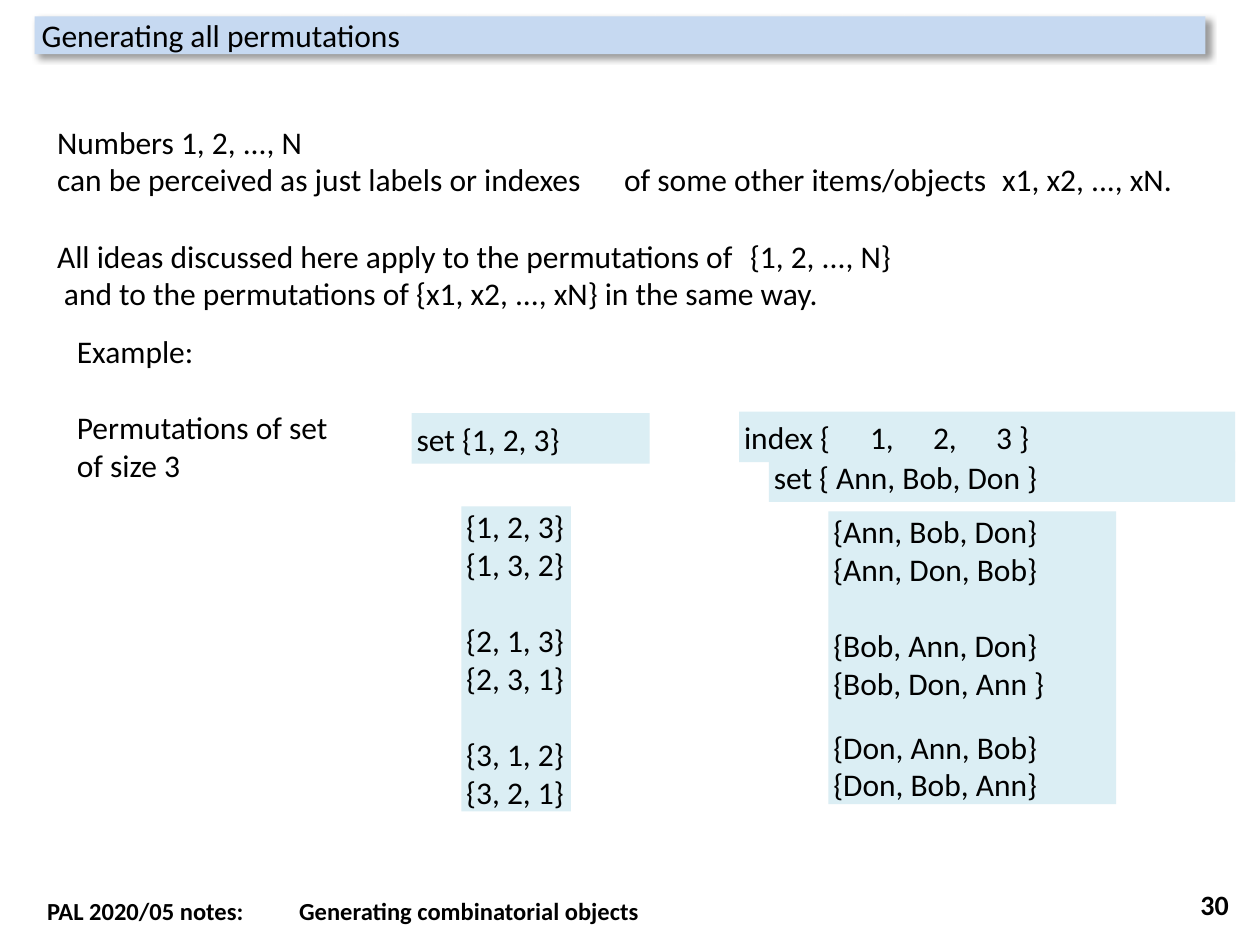
from dataclasses import dataclass

from lxml.etree import SubElement
from pptx import Presentation
from pptx.dml.color import RGBColor
from pptx.enum.shapes import MSO_SHAPE
from pptx.enum.text import MSO_ANCHOR, MSO_AUTO_SIZE, PP_ALIGN
from pptx.oxml.ns import qn
from pptx.util import Cm, Pt

BLACK = RGBColor(0x00, 0x00, 0x00)
TITLE_BLUE = RGBColor(0xC6, 0xD9, 0xF1)
PANEL_BLUE = RGBColor(0xDB, 0xEE, 0xF4)

FONT = "Calibri"
LINE_GAP = 22        # one 18 pt line
SMALL_GAP = 14.65    # one 12 pt line
TEXT_INSETS = (0.25, 0.13)
LABEL_INSETS = (0.1, 0.13)
LIST_INSETS = (0.1, 0)


@dataclass(frozen=True)
class Box:
    left: float
    top: float
    width: float
    height: float


@dataclass(frozen=True)
class Line:
    text: str
    gap: float = 0               # points above the line
    indent: float = 0            # cm
    tabs: tuple[float, ...] = ()  # cm


@dataclass(frozen=True)
class Panel:
    box: Box
    lines: list[Line]
    insets: tuple[float, float] = LABEL_INSETS
    anchor: MSO_ANCHOR = MSO_ANCHOR.TOP


def place(shape, box: Box) -> None:
    shape.left, shape.top = Cm(box.left), Cm(box.top)
    shape.width, shape.height = Cm(box.width), Cm(box.height)


def write(shape, lines: list[Line], *, size: float = 18, bold: bool = False,
          align=PP_ALIGN.LEFT, anchor=MSO_ANCHOR.TOP,
          insets: tuple[float, float] = TEXT_INSETS) -> None:
    frame = shape.text_frame
    frame.word_wrap = True
    frame.auto_size = MSO_AUTO_SIZE.NONE
    frame.vertical_anchor = anchor
    frame.margin_left = frame.margin_right = Cm(insets[0])
    frame.margin_top = frame.margin_bottom = Cm(insets[1])
    for number, line in enumerate(lines):
        paragraph = frame.add_paragraph() if number else frame.paragraphs[0]
        paragraph.alignment = align
        paragraph.space_before = Pt(line.gap)
        run = paragraph.add_run()
        run.text = line.text
        run.font.name, run.font.size, run.font.bold = FONT, Pt(size), bold
        run.font.color.rgb = BLACK
        # Indent, no bullet and tab stops
        properties = paragraph._p.get_or_add_pPr()
        properties.set("marL", str(Cm(line.indent)))
        properties.set("indent", "0")
        SubElement(properties, qn("a:buNone"))
        if line.tabs:
            stops = SubElement(properties, qn("a:tabLst"))
            for stop in line.tabs:
                SubElement(stops, qn("a:tab"), pos=str(Cm(stop)), algn="l")


def add_note(slide, box: Box, lines: list[Line], **text_format) -> None:
    note = slide.shapes.add_textbox(0, 0, 0, 0)
    place(note, box)
    write(note, lines, **text_format)


def add_panel(slide, panel: Panel) -> None:
    rectangle = slide.shapes.add_shape(MSO_SHAPE.RECTANGLE, 0, 0, 0, 0)
    place(rectangle, panel.box)
    rectangle.shadow.inherit = False
    rectangle.fill.solid()
    rectangle.fill.fore_color.rgb = PANEL_BLUE
    rectangle.line.fill.background()
    write(rectangle, panel.lines, insets=panel.insets, anchor=panel.anchor)


def add_shadow(shape) -> None:
    effects = SubElement(shape._element.spPr, qn("a:effectLst"))
    shadow = SubElement(effects, qn("a:outerShdw"), blurRad=str(Pt(4)),
                        dist=str(Pt(3)), dir="2700000", algn="tl", rotWithShape="0")
    colour = SubElement(shadow, qn("a:srgbClr"), val=str(BLACK))
    SubElement(colour, qn("a:alpha"), val="40000")


def permutation_lines(pairs: list[tuple[str, str]], gaps: list[float]) -> list[Line]:
    return [Line(text, gap if first else 0)
            for pair, gap in zip(pairs, gaps)
            for text, first in zip(pair, (True, False))]


NUMBER_PAIRS = [("{1, 2, 3}", "{1, 3, 2}"),
                ("{2, 1, 3}", "{2, 3, 1}"),
                ("{3, 1, 2}", "{3, 2, 1}")]
NAME_PAIRS = [("{Ann, Bob, Don}", "{Ann, Don, Bob}"),
              ("{Bob, Ann, Don}", "{Bob, Don, Ann }"),
              ("{Don, Ann, Bob}", "{Don, Bob, Ann}")]

PANELS = [
    Panel(Box(9.3, 10.21, 2.21, 6.15),
          permutation_lines(NUMBER_PAIRS, [0, LINE_GAP, LINE_GAP]),
          LIST_INSETS, MSO_ANCHOR.MIDDLE),
    Panel(Box(8.3, 8.33, 4.8, 1.02), [Line("set {1, 2, 3}")]),
    Panel(Box(16.7, 10.31, 5.8, 5.9),
          permutation_lines(NAME_PAIRS, [0, LINE_GAP, SMALL_GAP]),
          LIST_INSETS, MSO_ANCHOR.MIDDLE),
    Panel(Box(15.5, 9.1, 9.4, 1.02), [Line("set { Ann, Bob, Don }")]),
    Panel(Box(14.9, 8.3, 10, 1.02),
          [Line("index {\t1,\t2,\t3 }", tabs=(2.33, 3.5, 4.85))]),
]

INTRODUCTION = [
    Line("Numbers 1, 2, ..., N"),
    Line("can be perceived as just labels or indexes\tof some other items/objects"
         "\tx1, x2, ..., xN.", tabs=(11.41, 19)),
    Line("All ideas discussed here apply to the permutations of\t{1, 2, ..., N}",
         gap=LINE_GAP, tabs=(14.05,)),
    Line("and to the permutations of {x1, x2, ..., xN} in the same way.", indent=0.14),
]


def main() -> None:
    deck = Presentation()
    deck.slide_width, deck.slide_height = Cm(25.4), Cm(19.05)
    slide = deck.slides.add_slide(deck.slide_layouts[1])

    # Title bar
    title = slide.shapes.title
    place(title, Box(0.7, 0.33, 23.6, 0.76))
    title.fill.solid()
    title.fill.fore_color.rgb = TITLE_BLUE
    add_shadow(title)
    write(title, [Line("Generating all permutations", indent=0.14)],
          anchor=MSO_ANCHOR.MIDDLE, insets=(0, 0))

    # Introduction
    introduction = slide.placeholders[1]
    place(introduction, Box(0.9, 2.34, 23.6, 4.11))
    write(introduction, INTRODUCTION)

    # Example with its sets and permutations
    for panel in PANELS:
        add_panel(slide, panel)
    add_note(slide, Box(1.3, 6.56, 6, 3.33),
             [Line("Example:"), Line("Permutations of set of size 3", gap=LINE_GAP)])

    # Footer and page number
    add_note(slide, Box(0.7, 17.93, 15.4, 0.86),
             [Line("PAL 2020/05 notes:\tGenerating combinatorial objects", tabs=(4.15,))],
             size=14, bold=True)
    add_note(slide, Box(19.1, 17.73, 5.92, 1.02), [Line("30")], size=16, bold=True,
             align=PP_ALIGN.RIGHT, anchor=MSO_ANCHOR.MIDDLE)

    deck.save("out.pptx")


if __name__ == "__main__":
    main()
